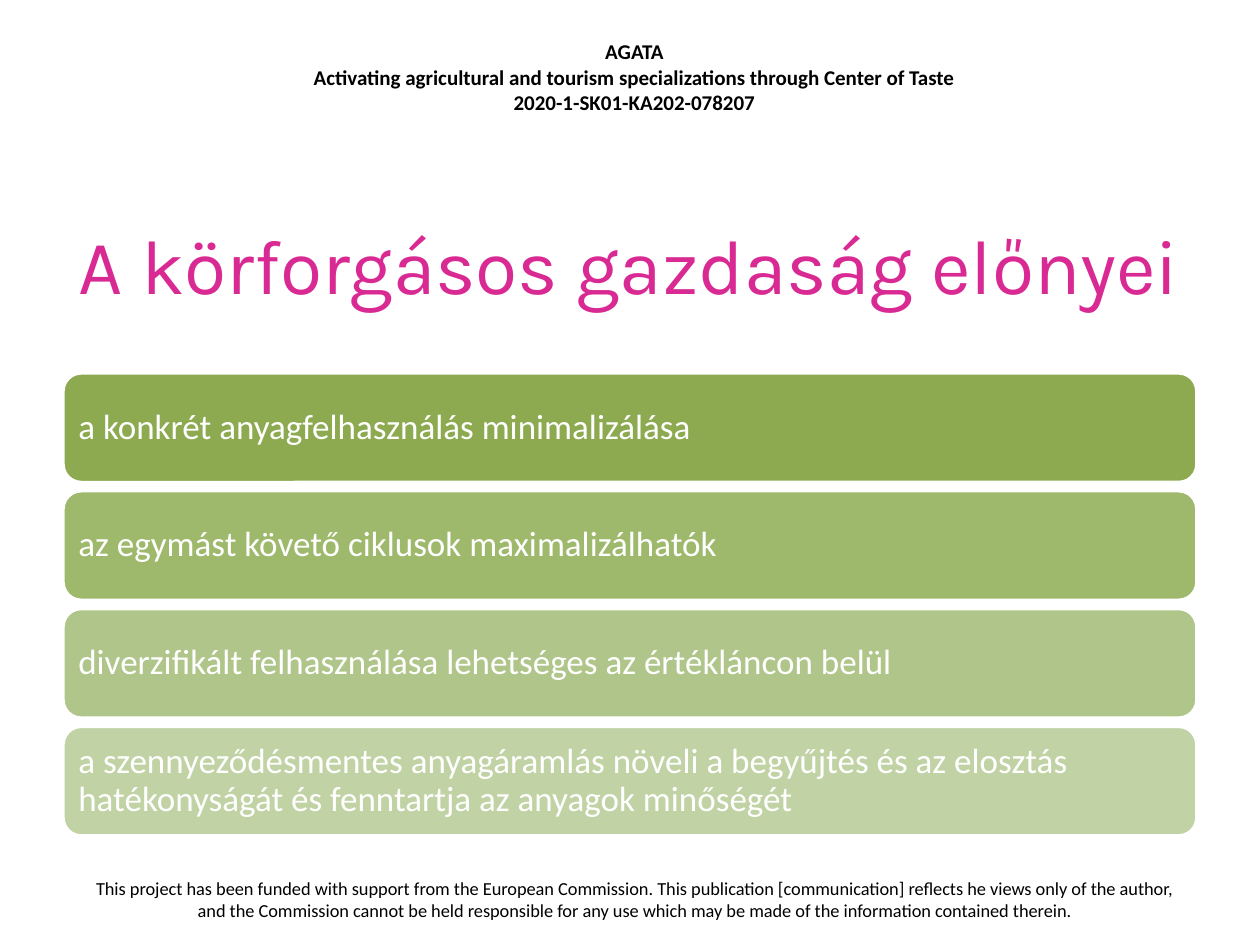
from pptx import Presentation
from pptx import util as u
from pptx.dml.color import RGBColor
from pptx.enum import shapes, text

COLS, ROWS = 20, 15
BAR_TOP, BAR_HEIGHT, BAR_PITCH = 5.92, 1.74, 1.87

HEADER = [
    "AGATA",
    "Activating agricultural and tourism specializations through Center of Taste",
    "2020-1-SK01-KA202-078207",
]
FOOTER = (
    "This project has been funded with support from the European Commission. "
    "This publication [communication] reflects he views only of the author, "
    "and the Commission cannot be held responsible for any use which may be made "
    "of the information contained therein."
)
BENEFITS = [
    ("a konkrét anyagfelhasználás minimalizálása", "8DAA51"),
    ("az egymást követő ciklusok maximalizálhatók", "9EB86C"),
    ("diverzifikált felhasználása lehetséges az értékláncon belül", "AFC589"),
    ("a szennyeződésmentes anyagáramlás növeli a begyűjtés és az elosztás "
     "hatékonyságát és fenntartja az anyagok minőségét", "C1D3A5"),
]


def rgb(value):
    return RGBColor.from_string(value)


def write(tf, lines, size, font="Calibri", color="000000", bold=False,
          align=text.PP_ALIGN.CENTER, anchor=text.MSO_ANCHOR.TOP, spacing=None):
    tf.word_wrap = True
    tf.vertical_anchor = anchor
    for i, line in enumerate(lines):
        p = tf.paragraphs[0] if i == 0 else tf.add_paragraph()
        p.alignment = align
        if spacing:
            p.line_spacing = spacing
        r = p.add_run()
        r.text = line
        r.font.name = font
        r.font.size = u.Pt(size)
        r.font.bold = bold
        r.font.color.rgb = rgb(color)


class Deck:
    """Slide builder that measures in columns and rows of the slide grid."""

    def __init__(self):
        self.prs = Presentation()
        self.prs.slide_width, self.prs.slide_height = u.Inches(10), u.Inches(7.5)
        self.s = self.prs.slides.add_slide(self.prs.slide_layouts[6])

    def box(self, col, row, cols, rows):
        w, h = self.prs.slide_width / COLS, self.prs.slide_height / ROWS
        return [round(n) for n in (col * w, row * h, cols * w, rows * h)]

    def label(self, box, lines, **style):
        sp = self.s.shapes.add_textbox(*self.box(*box))
        write(sp.text_frame, lines, **style)

    def bar(self, box, line, fill):
        sp = self.s.shapes.add_shape(
            shapes.MSO_SHAPE.ROUNDED_RECTANGLE, *self.box(*box))
        sp.shadow.inherit = False
        sp.fill.solid()
        sp.fill.fore_color.rgb = rgb(fill)
        sp.line.color.rgb = rgb("FFFFFF")
        sp.line.width = u.Pt(2)
        tf = sp.text_frame
        tf.margin_left = tf.margin_right = u.Inches(0.08)
        tf.margin_top = tf.margin_bottom = u.Inches(0.08)
        write(tf, [line], size=20, color="FFFFFF", spacing=0.9,
              align=text.PP_ALIGN.LEFT, anchor=text.MSO_ANCHOR.MIDDLE)


def main():
    deck = Deck()
    deck.label((4.16, 0.52, 11.82, 1.42), HEADER, size=12, bold=True)
    deck.label((1.08, 13.82, 18, 0.94), [FOOTER], size=10.5)
    deck.label((1, 2.94, 18, 2.5), ["A körforgásos gazdaság előnyei"], size=44,
               font="Karla", color="D92A93", anchor=text.MSO_ANCHOR.MIDDLE)
    for i, (line, fill) in enumerate(BENEFITS):
        deck.bar((1, BAR_TOP + i * BAR_PITCH, 18, BAR_HEIGHT), line, fill)
    deck.prs.save("out.pptx")


if __name__ == "__main__":
    main()
